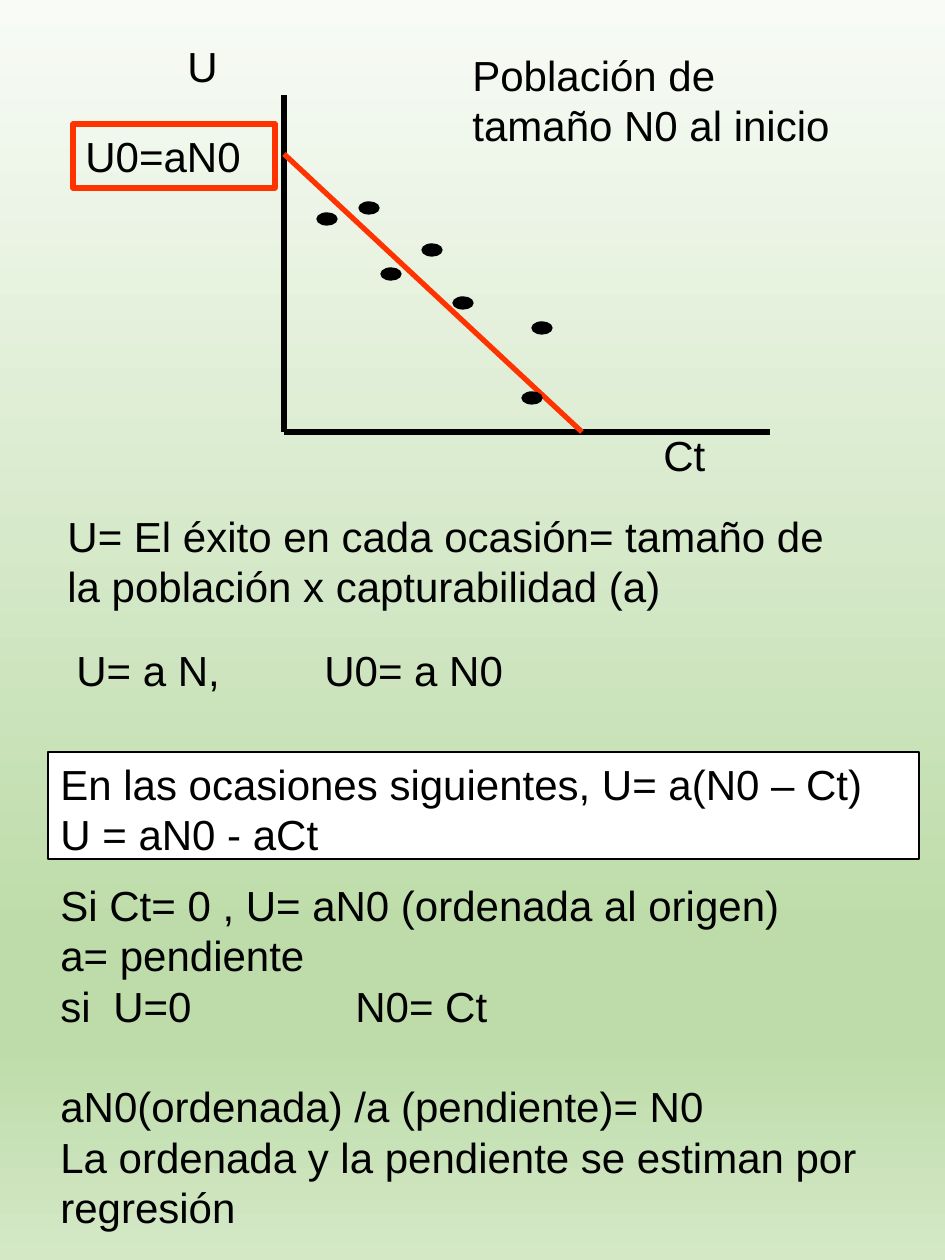
import pptx
import pptx.util
import pptx.dml.color
import pptx.enum.shapes
import pptx.enum.text
import pptx.oxml.ns
from lxml import etree

PX_PER_INCH = 126
FONT_NAME = "Arial"
BLACK = pptx.dml.color.RGBColor(0x00, 0x00, 0x00)
WHITE = pptx.dml.color.RGBColor(0xFF, 0xFF, 0xFF)
RED = pptx.dml.color.RGBColor(0xFF, 0x33, 0x00)
BACKGROUND_STOPS = [
    (0, pptx.dml.color.RGBColor(0xF8, 0xFB, 0xF6)),
    (74, pptx.dml.color.RGBColor(0xBE, 0xDC, 0xAA)),
    (83, pptx.dml.color.RGBColor(0xBE, 0xDC, 0xAA)),
    (100, pptx.dml.color.RGBColor(0xD4, 0xE8, 0xC6)),
]
DOT_SIZE = (20, 12)
DOTS = [(381, 268), (359, 202), (422, 244), (453, 297),
        (532, 322), (522, 392), (317, 213)]
ORIGIN = (284, 432)


def px(length):
    return pptx.util.Emu(round(length * 914400 / PX_PER_INCH))


def set_background(slide):
    fill = slide.background.fill
    fill.gradient()
    fill.gradient_angle = 270
    qn = pptx.oxml.ns.qn
    stop_list = slide.element.find(".//" + qn("a:gsLst"))
    for stop in list(stop_list):
        stop_list.remove(stop)
    for percent, color in BACKGROUND_STOPS:
        stop = etree.SubElement(stop_list, qn("a:gs"), pos=str(percent * 1000))
        etree.SubElement(stop, qn("a:srgbClr"), val=str(color))


def set_tab_stops(paragraph, positions):
    qn = pptx.oxml.ns.qn
    properties = paragraph._p.get_or_add_pPr()
    tab_list = etree.SubElement(properties, qn("a:tabLst"))
    for position in positions:
        etree.SubElement(tab_list, qn("a:tab"), pos=str(int(px(position))), algn="l")


def add_text(slide, left, top, width, height, lines, grow=True):
    shape = slide.shapes.add_textbox(px(left), px(top), px(width), px(height))
    text_frame = shape.text_frame
    text_frame.text = "\n".join(lines)
    text_frame.word_wrap = True
    if grow:
        text_frame.auto_size = pptx.enum.text.MSO_AUTO_SIZE.SHAPE_TO_FIT_TEXT
    for paragraph in text_frame.paragraphs:
        paragraph.line_spacing = pptx.util.Pt(28.8)
        for run in paragraph.runs:
            run.font.name = FONT_NAME
            run.font.size = pptx.util.Pt(24)
            run.font.color.rgb = BLACK
    return shape


def set_outline(shape, color, points):
    shape.line.color.rgb = color
    shape.line.width = pptx.util.Pt(points)


def add_line(slide, start, end, color):
    connector = slide.shapes.add_connector(
        pptx.enum.shapes.MSO_CONNECTOR.STRAIGHT,
        px(start[0]), px(start[1]), px(end[0]), px(end[1]))
    set_outline(connector, color, 3)
    etree.SubElement(connector._element.spPr, pptx.oxml.ns.qn("a:effectLst"))


def add_dot(slide, left, top):
    dot = slide.shapes.add_shape(
        pptx.enum.shapes.MSO_SHAPE.OVAL,
        px(left), px(top), px(DOT_SIZE[0]), px(DOT_SIZE[1]))
    dot.shadow.inherit = False
    dot.fill.solid()
    dot.fill.fore_color.rgb = BLACK
    set_outline(dot, BLACK, 0.75)


def add_graph(slide):
    # Axes and regression line
    add_line(slide, (ORIGIN[0], 95), ORIGIN, BLACK)
    add_line(slide, ORIGIN, (770, ORIGIN[1]), BLACK)
    add_line(slide, (ORIGIN[0], 154), (582, ORIGIN[1]), RED)

    # Observations
    for left, top in DOTS:
        add_dot(slide, left, top)

    # Labels
    add_text(slide, 175, 34, 59, 64, ["U"])
    add_text(slide, 651, 423, 159, 64, ["Ct"])
    add_text(slide, 460, 43, 412, 115, ["Población de tamaño N0 al inicio"])
    intercept = add_text(slide, 73, 124, 202, 64, ["U0=aN0"])
    set_outline(intercept, RED, 3)


def add_explanation(slide):
    # Definition of success
    add_text(slide, 55, 504, 814, 115,
             ["U= El éxito en cada ocasión= tamaño de la población x capturabilidad (a)"])
    formulas = add_text(slide, 64, 638, 840, 63, ["U= a N,\tU0= a N0"])
    set_tab_stops(formulas.text_frame.paragraphs[0], [248])

    # Framed model
    model = add_text(slide, 48, 752, 871, 107,
                     ["En las ocasiones siguientes, U= a(N0 – Ct)", "U = aN0 - aCt"],
                     grow=False)
    model.fill.solid()
    model.fill.fore_color.rgb = WHITE
    set_outline(model, BLACK, 0.75)

    # Consequences
    consequences = add_text(slide, 48, 873, 871, 369, [
        "Si Ct= 0 , U= aN0 (ordenada al origen)",
        "a= pendiente",
        "si\tU=0\tN0= Ct",
        "aN0(ordenada) /a (pendiente)= N0",
        "La ordenada y la pendiente se estiman por regresión",
    ])
    paragraphs = consequences.text_frame.paragraphs
    set_tab_stops(paragraphs[2], [53, 295])
    paragraphs[3].space_before = pptx.util.Pt(28.8)


def main():
    presentation = pptx.Presentation()
    presentation.slide_width = px(945)
    presentation.slide_height = px(1260)
    slide = presentation.slides.add_slide(presentation.slide_layouts[6])
    set_background(slide)
    add_graph(slide)
    add_explanation(slide)
    presentation.save("out.pptx")


if __name__ == "__main__":
    main()
